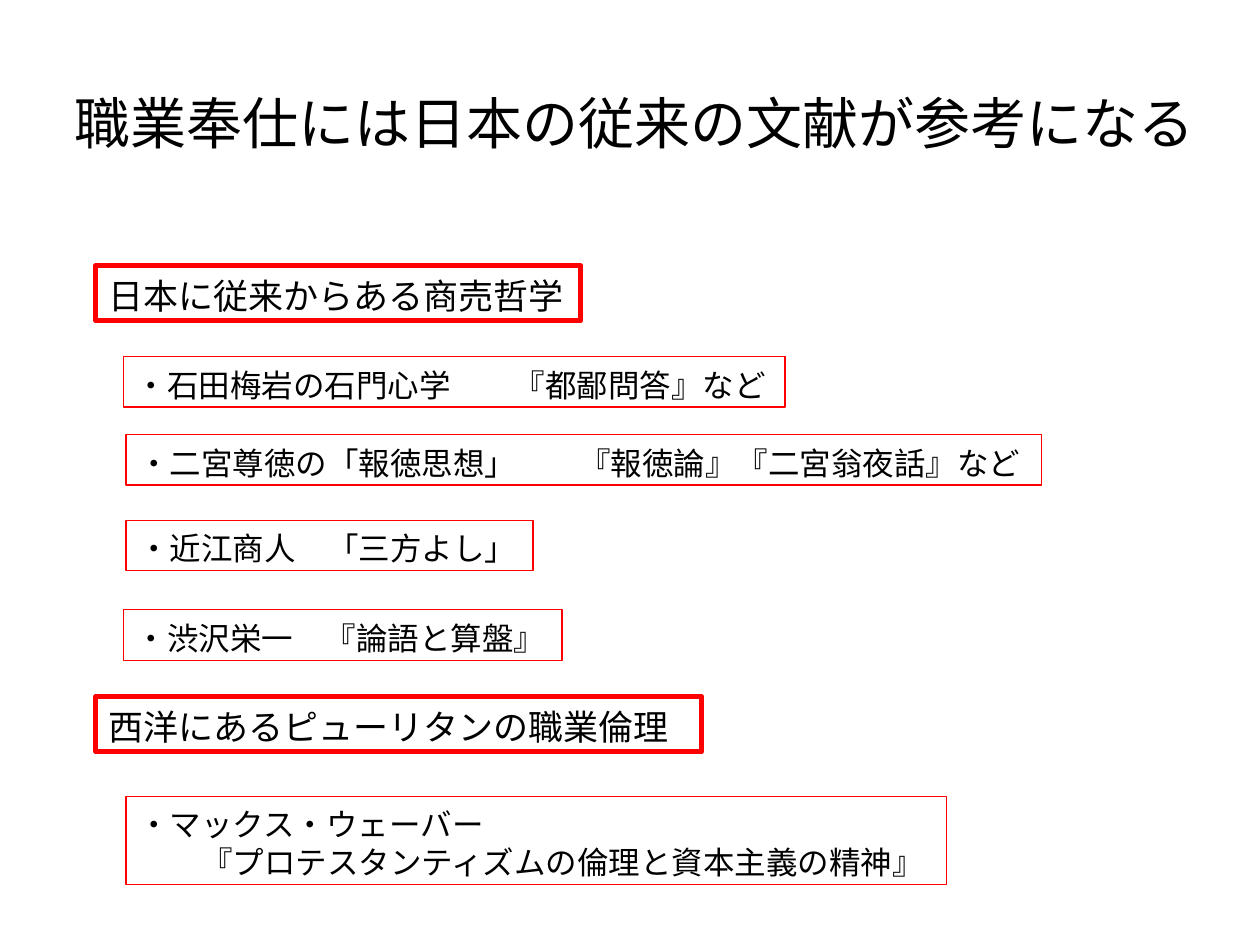
from pptx import Presentation
from pptx.dml.color import RGBColor
from pptx.enum.shapes import MSO_SHAPE
from pptx.enum.text import MSO_ANCHOR, PP_ALIGN
from pptx.util import Pt
from lxml import etree

RECTANGLE = MSO_SHAPE.RECTANGLE
TOP, MIDDLE = MSO_ANCHOR.TOP, MSO_ANCHOR.MIDDLE
LEFT = PP_ALIGN.LEFT
A = "{http://schemas.openxmlformats.org/drawingml/2006/main}"

# Content: paragraphs, left, top, width; a tab opens a two-character gap
TITLE = "職業奉仕には日本の従来の文献が参考になる"
HEADINGS = [
    (["日本に従来からある商売哲学"], 54.7, 151.9, 277.2),
    (["西洋にあるピューリタンの職業倫理"], 54.7, 398.2, 346.3),
]
WORKS = [
    (["・石田梅岩の石門心学\t『都鄙問答』など"], 70.6, 203.8, 378),
    (["・二宮尊徳の「報徳思想」\t『報徳論』『二宮翁夜話』など"], 72, 248.4, 523.4),
    (["・近江商人　「三方よし」"], 72, 297.4, 232.6),
    (["・渋沢栄一　『論語と算盤』"], 70.6, 348.5, 250.6),
    (["・マックス・ウェーバー",
      "『プロテスタンティズムの倫理と資本主義の精神』"], 72, 455, 468.7),
]

THEME = {
    "font": "Noto Sans CJK JP",
    "text": RGBColor(0, 0, 0),
    "frame": RGBColor(255, 0, 0),
    "title_size": 32,
    "heading": {"size": 20, "line": 3},
    "work": {"size": 18, "line": 0.75},
}
LINE_PITCH = 1.2
PADDING = 3.6
GAP_CHARS = 2


def format_runs(paragraph, size):
    paragraph.alignment = LEFT
    for run in paragraph.runs:
        run.font.size = Pt(size)
        run.font.name = THEME["font"]
        run.font.color.rgb = THEME["text"]
        east_asian = etree.SubElement(run.font._element, A + "ea")
        east_asian.set("typeface", THEME["font"])


def add_tab_stop(paragraph, position):
    stops = etree.SubElement(paragraph._p.get_or_add_pPr(), A + "tabLst")
    etree.SubElement(stops, A + "tab", pos=str(Pt(position)), algn="l")


def add_box(slide, lines, left, top, width, style):
    size = style["size"]
    pitch = size * LINE_PITCH
    height = len(lines) * pitch + 2 * PADDING
    box = slide.shapes.add_shape(RECTANGLE, Pt(left), Pt(top), Pt(width), Pt(height))
    box.shadow.inherit = False
    box.fill.background()
    box.line.color.rgb = THEME["frame"]
    box.line.width = Pt(style["line"])

    frame = box.text_frame
    frame.word_wrap = True
    frame.vertical_anchor = TOP
    frame.margin_top, frame.margin_bottom = Pt(PADDING + 1.5), Pt(PADDING - 1.5)
    frame.text = "\n".join(lines)
    for index, paragraph in enumerate(frame.paragraphs):
        format_runs(paragraph, size)
        paragraph.line_spacing = Pt(pitch)
        if index:  # continuation line is indented by the gap
            paragraph._p.get_or_add_pPr().set("marL", str(Pt(GAP_CHARS * size)))
        author, tab, _ = lines[index].partition("\t")
        if tab:
            add_tab_stop(paragraph, (len(author) + GAP_CHARS) * size)


presentation = Presentation()
presentation.slide_width, presentation.slide_height = Pt(720), Pt(540)
slide = presentation.slides.add_slide(presentation.slide_layouts[5])

# Title
title = slide.shapes.title
title.left, title.top, title.width, title.height = Pt(35.3), Pt(24.5), Pt(670.3), Pt(90)
title.text_frame.text = TITLE
title.text_frame.vertical_anchor = MIDDLE
format_runs(title.text_frame.paragraphs[0], THEME["title_size"])

# Headings and the works below them
for boxes, style in ((HEADINGS, THEME["heading"]), (WORKS, THEME["work"])):
    for lines, left, top, width in boxes:
        add_box(slide, lines, left, top, width, style)

presentation.save("out.pptx")
